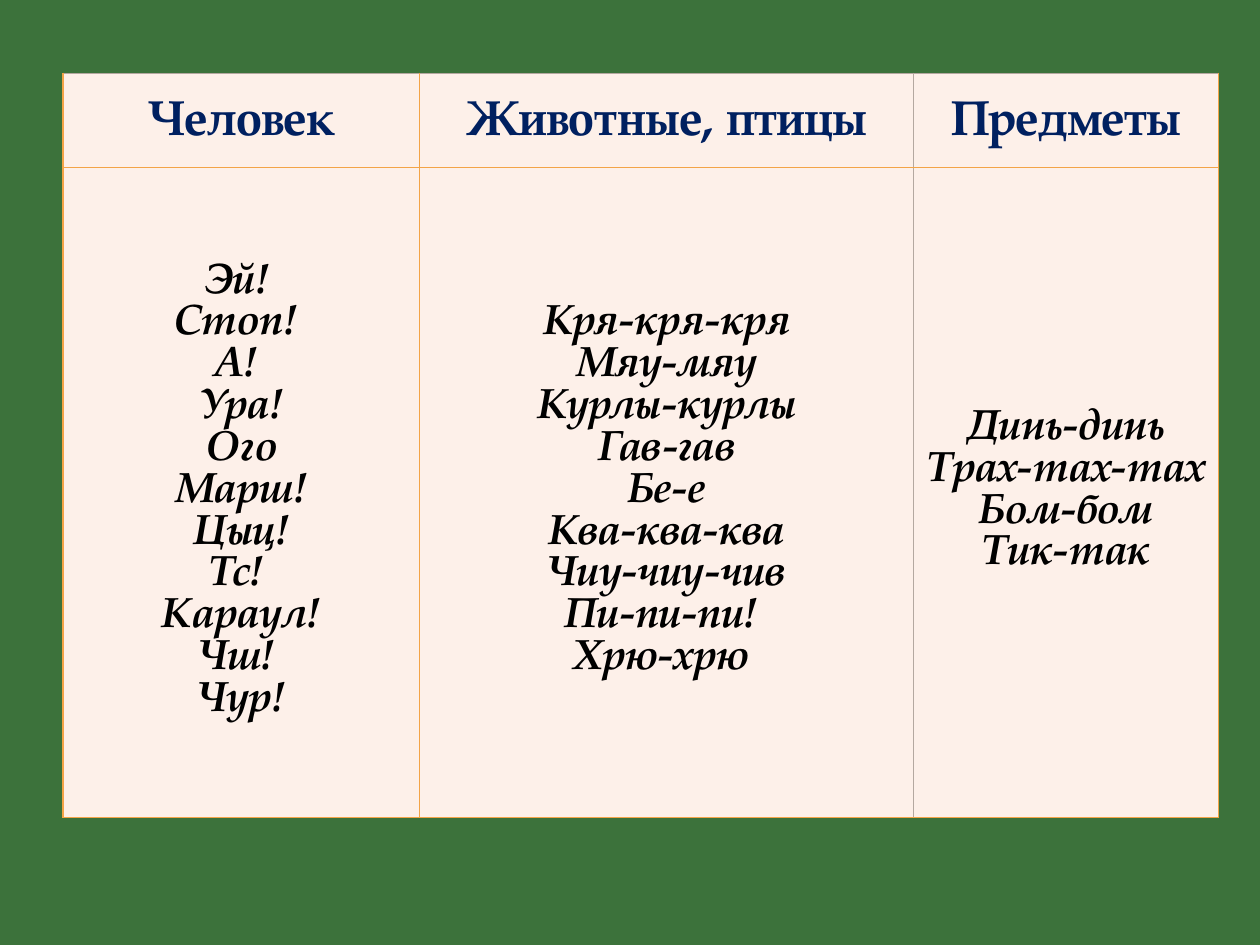
from lxml.etree import SubElement
from pptx import Presentation
from pptx.dml.color import RGBColor
from pptx.enum.text import MSO_ANCHOR as Anchor, PP_ALIGN as Align
from pptx.oxml.ns import qn
from pptx.util import Inches, Pt

GREEN = RGBColor(0x3C, 0x72, 0x3B)
CREAM = RGBColor(0xFD, 0xF0, 0xE9)
NAVY = RGBColor(0x00, 0x20, 0x60)
BLACK = RGBColor(0, 0, 0)
AMBER = RGBColor(0xF3, 0xA4, 0x47)
GREY = RGBColor(0xB4, 0xA8, 0xA0)
FONT = "TeX Gyre Pagella"

# Each column: heading, width share, words
COLS = [
    ("Человек", 2.83,
     ["Эй! ", "Стоп! ", "А! ", "Ура!", "Oго", "Марш!", "Цыц!", "Тс! ",
      "Караул!", "Чш! ", "Чур!"]),
    ("Животные, птицы", 3.92,
     ["Кря-кря-кря", "Мяу-мяу", "Курлы-курлы", "Гав-гав", "Бе-е",
      "Ква-ква-ква", "Чиу-чиу-чив", "Пи-пи-пи! ", "Хрю-хрю "]),
    ("Предметы", 2.42,
     ["Динь-динь", "Трах-тах-тах", "Бом-бом", "Тик-так"]),
]
ROWS = [0.75, 5.16]


def add_edge(cell, side, color, width):
    line = SubElement(cell._tc.get_or_add_tcPr(), qn(f"a:{side}"), w=str(Pt(width)))
    fill = SubElement(line, qn("a:solidFill"))
    SubElement(fill, qn("a:srgbClr"), val=str(color))


def style_cell(cell, row, col):
    # Borders go before the fill; the top and the last inner rule are thin grey
    thin = {"lnL": col == 2, "lnR": col == 1, "lnT": row == 0, "lnB": False}
    for side, faint in thin.items():
        add_edge(cell, side, *((GREY, 0.5) if faint else (AMBER, 1)))
    cell.fill.solid()
    cell.fill.fore_color.rgb = CREAM
    cell.vertical_anchor = Anchor.MIDDLE
    cell.margin_left = cell.margin_right = Inches(0.07)
    cell.margin_top = cell.margin_bottom = 0


def write_cell(cell, lines, head):
    cell.text = "\n".join(lines)
    for para in cell.text_frame.paragraphs:
        para.alignment = Align.CENTER
        para.line_spacing = 1.15 if head else 1.0
        font = para.font
        font.name, font.bold, font.italic = FONT, True, not head
        font.size = Pt(28 if head else 24)
        font.color.rgb = NAVY if head else BLACK


def add_words(slide, left, top, width, height):
    frame = slide.shapes.add_table(len(ROWS), len(COLS), left, top, width, height)
    table = frame.table
    for row, share in enumerate(ROWS):
        table.rows[row].height = int(height * share / sum(ROWS))
    total = sum(share for _, share, _ in COLS)
    for col, (title, share, words) in enumerate(COLS):
        table.columns[col].width = int(width * share / total)
        for row, lines in enumerate(([title], words)):
            cell = table.cell(row, col)
            style_cell(cell, row, col)
            write_cell(cell, lines, row == 0)


def main():
    deck = Presentation()
    deck.slide_width, deck.slide_height = Inches(10), Inches(7.5)
    slide = deck.slides.add_slide(deck.slide_layouts[6])
    back = slide.background.fill
    back.solid()
    back.fore_color.rgb = GREEN
    add_words(slide, Inches(0.5), Inches(0.58), Inches(9.17), Inches(5.91))
    deck.save("out.pptx")


if __name__ == "__main__":
    main()
